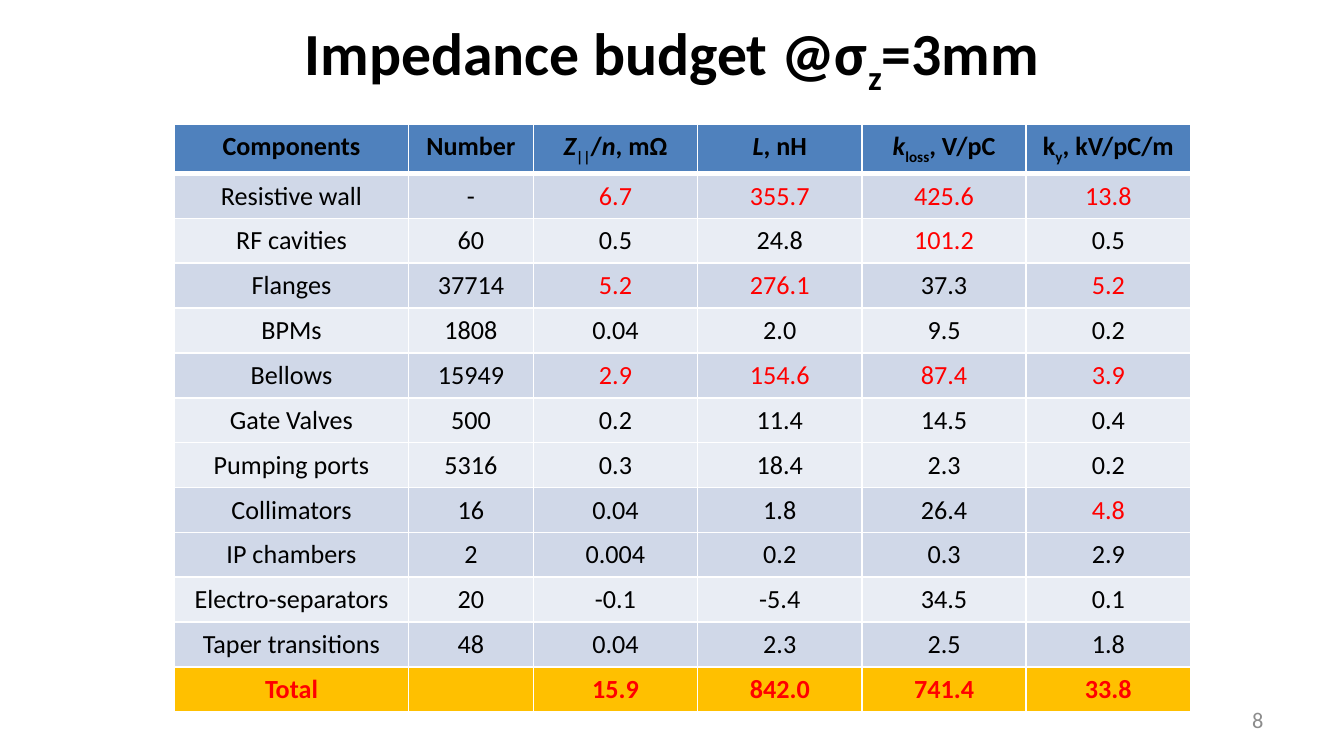
from dataclasses import dataclass

from lxml.etree import SubElement
from pptx import Presentation
from pptx.dml.color import RGBColor as Rgb
from pptx.enum.text import MSO_ANCHOR as Anchor, PP_ALIGN as Align
from pptx.oxml.ns import qn
from pptx.util import Cm, Pt


@dataclass(frozen=True)
class Theme:
    """Colours, font and type sizes of the slide."""
    font: str = "Calibri"
    ink: str = "000000"
    alert: str = "FF0000"
    muted: str = "8C8C8C"
    rule: str = "FFFFFF"
    header: str = "4F81BD"
    dark: str = "D0D8E8"
    light: str = "E9EDF4"
    total: str = "FFC000"
    title_size: int = 32
    table_size: int = 14
    number_size: int = 12
    thin: int = 1
    thick: int = 3


@dataclass(frozen=True)
class Box:
    """Region of the slide in centimetres."""
    left: float
    top: float
    width: float
    height: float

    def lengths(self):
        """Return the four lengths as Cm values."""
        return Cm(self.left), Cm(self.top), Cm(self.width), Cm(self.height)


THEME = Theme()
SHARE_LIMIT = 0.1
TITLE = [("Impedance budget @σ", ""), ("z", "sub"), ("=3mm", "")]
HEADINGS = [
    [("Components", "")],
    [("Number", "")],
    [("Z", "italic"), ("||", "sub"), ("/", ""), ("n", "italic"), (", mΩ", "")],
    [("L", "italic"), (", nH", "")],
    [("k", "italic"), ("loss", "sub"), (", V/pC", "")],
    [("k", ""), ("y", "sub"), (", kV/pC/m", "")],
]
COMPONENTS = [
    (THEME.dark, "Resistive wall", "-", "6.7", "355.7", "425.6", "13.8"),
    (THEME.light, "RF cavities", "60", "0.5", "24.8", "101.2", "0.5"),
    (THEME.dark, "Flanges", "37714", "5.2", "276.1", "37.3", "5.2"),
    (THEME.light, "BPMs", "1808", "0.04", "2.0", "9.5", "0.2"),
    (THEME.dark, "Bellows", "15949", "2.9", "154.6", "87.4", "3.9"),
    (THEME.light, "Gate Valves", "500", "0.2", "11.4", "14.5", "0.4"),
    (THEME.light, "Pumping ports", "5316", "0.3", "18.4", "2.3", "0.2"),
    (THEME.dark, "Collimators", "16", "0.04", "1.8", "26.4", "4.8"),
    (THEME.dark, "IP chambers", "2", "0.004", "0.2", "0.3", "2.9"),
    (THEME.light, "Electro-separators", "20", "-0.1", "-5.4", "34.5", "0.1"),
    (THEME.dark, "Taper transitions", "48", "0.04", "2.3", "2.5", "1.8"),
]
TOTALS = ("Total", "", "15.9", "842.0", "741.4", "33.8")


def write_runs(frame, parts, size, color, bold=False, align=Align.CENTER):
    """Write styled parts as runs of the frame's first paragraph."""
    paragraph = frame.paragraphs[0]
    paragraph.alignment = align
    for text, style in parts:
        run = paragraph.add_run()
        run.text = text
        font = run.font
        font.name, font.size, font.bold = THEME.font, Pt(size), bold
        font.italic = style == "italic"
        font.color.rgb = Rgb.from_string(color)
        if style == "sub":
            font._element.set("baseline", "-25000")


def style_cell(cell, fill, top, bottom):
    """Give a cell its white rules, then its fill."""
    properties = cell._tc.get_or_add_tcPr()
    edges = {"lnL": THEME.thin, "lnR": THEME.thin, "lnT": top, "lnB": bottom}
    for edge, width in edges.items():
        line = SubElement(properties, qn(f"a:{edge}"), w=str(Pt(width)))
        SubElement(SubElement(line, qn("a:solidFill")), qn("a:srgbClr"), val=THEME.rule)
    cell.fill.solid()
    cell.fill.fore_color.rgb = Rgb.from_string(fill)


def fill_cell(cell, parts, fill, color, bold, top=THEME.thin, bottom=THEME.thin):
    """Style one table cell and write its text."""
    style_cell(cell, fill, top, bottom)
    if parts:
        write_runs(cell.text_frame, parts, THEME.table_size, color, bold)
    else:
        ending = cell.text_frame.paragraphs[0]._p.get_or_add_endParaRPr()
        ending.set("sz", str(THEME.table_size * 100))


def is_major(column, value):
    """Tell whether a contribution exceeds the limit share of its total."""
    return column >= 2 and float(value) > SHARE_LIMIT * float(TOTALS[column])


def add_title(slide, box):
    """Place the slide title in the title placeholder."""
    title = slide.shapes.title
    title.left, title.top, title.width, title.height = box.lengths()
    title.text_frame.vertical_anchor = Anchor.MIDDLE
    write_runs(title.text_frame, TITLE, THEME.title_size, THEME.ink, bold=True)


def add_budget(slide, box):
    """Build the impedance budget table inside the box."""
    row_count, column_count = len(COMPONENTS) + 2, len(HEADINGS)
    budget = slide.shapes.add_table(row_count, column_count, *box.lengths()).table
    budget.horz_banding = False
    label_widths = [4.42, 2.36]
    value_count = column_count - len(label_widths)
    value_width = (box.width - sum(label_widths)) / value_count
    for column, width in zip(budget.columns, label_widths + [value_width] * value_count):
        column.width = Cm(width)
    for row in budget.rows:
        row.height = Cm(box.height / row_count)

    for column, heading in enumerate(HEADINGS):
        fill_cell(budget.cell(0, column), heading, THEME.header, THEME.ink, True,
                  bottom=THEME.thick)
    last_heading = budget.cell(0, column_count - 1)
    last_heading.margin_left = last_heading.margin_right = Cm(0.1)

    for row, (band, *values) in enumerate(COMPONENTS, start=1):
        for column, value in enumerate(values):
            color = THEME.alert if is_major(column, value) else THEME.ink
            cell = budget.cell(row, column)
            cell.vertical_anchor = Anchor.MIDDLE
            fill_cell(cell, [(value, "")], band, color, False,
                      top=THEME.thick if row == 1 else THEME.thin)

    for column, value in enumerate(TOTALS):
        cell = budget.cell(row_count - 1, column)
        cell.vertical_anchor = Anchor.MIDDLE
        fill_cell(cell, [(value, "")] if value else [], THEME.total, THEME.alert, True)


def add_page_number(slide, box):
    """Place the page number at the right of the box."""
    frame = slide.shapes.add_textbox(*box.lengths()).text_frame
    frame.word_wrap = True
    frame.vertical_anchor = Anchor.MIDDLE
    write_runs(frame, [("8", "")], THEME.number_size, THEME.muted, align=Align.RIGHT)


def main():
    """Build the slide and save it."""
    deck = Presentation()
    deck.slide_width, deck.slide_height = Cm(25.4), Cm(14.29)
    slide = deck.slides.add_slide(deck.slide_layouts[5])
    add_title(slide, Box(1.27, 0.18, 22.86, 1.78))
    add_page_number(slide, Box(18.21, 13.23, 5.92, 0.76))
    add_budget(slide, Box(3.3, 2.35, 19.2, 11))
    deck.save("out.pptx")


if __name__ == "__main__":
    main()
